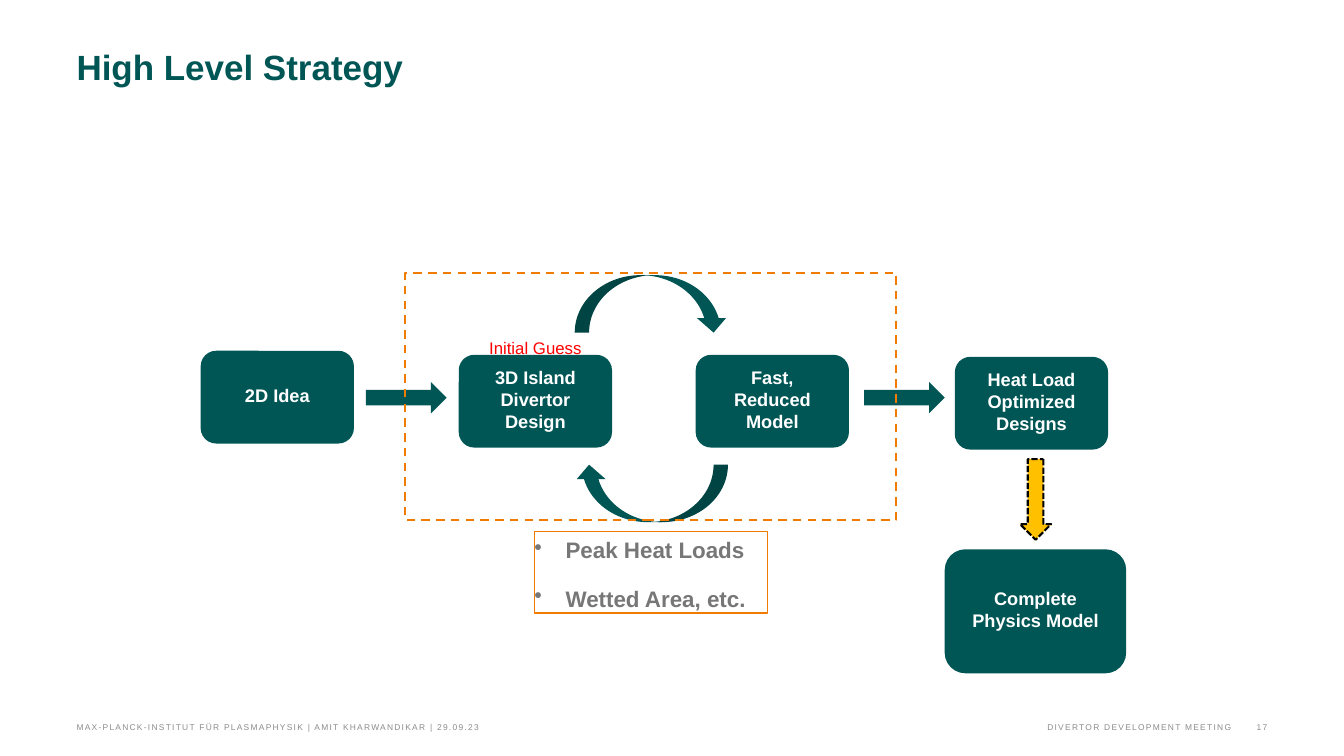
from dataclasses import dataclass

import pptx
import pptx.dml.color
import pptx.enum.dml
import pptx.enum.shapes
import pptx.enum.text
import pptx.oxml
import pptx.oxml.ns
import pptx.util
from pptx.util import Inches, Pt

SHAPE = pptx.enum.shapes.MSO_SHAPE
ALIGN = pptx.enum.text.PP_ALIGN
ANCHOR = pptx.enum.text.MSO_ANCHOR
DASH = pptx.enum.dml.MSO_LINE

TEAL, ORANGE, GOLD = "005555", "EF7C00", "FFC000"
WHITE, BLACK, RED = "FFFFFF", "000000", "FF0000"
GREY, FOOTER_GREY = "777777", "8C8C8C"


@dataclass(frozen=True)
class Area:
    left: float
    top: float
    width: float
    height: float

    def lengths(self) -> list:
        return [Inches(n) for n in (self.left, self.top, self.width, self.height)]


@dataclass(frozen=True)
class Style:
    size: float
    color: str
    bold: bool = False
    align: ALIGN = ALIGN.LEFT
    line_points: float | None = None


@dataclass(frozen=True)
class Step:
    text: str
    area: Area


@dataclass(frozen=True)
class Arrow:
    kind: SHAPE
    area: Area
    rotation: float = 0


@dataclass(frozen=True)
class FooterPart:
    text: str
    area: Area
    align: ALIGN


STEPS = [
    Step("2D Idea", Area(1.99, 3.48, 1.52, 0.92)),
    Step("3D Island Divertor Design", Area(4.55, 3.52, 1.52, 0.92)),
    Step("Fast, Reduced Model", Area(6.9, 3.52, 1.52, 0.92)),
    Step("Heat Load Optimized Designs", Area(9.47, 3.54, 1.52, 0.92)),
    Step("Complete Physics Model", Area(9.37, 5.45, 1.8, 1.23)),
]
ARROWS = [
    Arrow(SHAPE.CURVED_DOWN_ARROW, Area(5.7, 2.73, 1.52, 0.57)),
    Arrow(SHAPE.CURVED_DOWN_ARROW, Area(5.7, 4.61, 1.52, 0.57), 180),
    Arrow(SHAPE.RIGHT_ARROW, Area(3.63, 3.79, 0.8, 0.31)),
    Arrow(SHAPE.RIGHT_ARROW, Area(8.57, 3.79, 0.8, 0.31)),
]
FINAL_ARROW = Arrow(SHAPE.RIGHT_ARROW, Area(9.87, 4.8, 0.8, 0.31), 90)
FOOTER = [
    FooterPart("DIVERTOR DEVELOPMENT MEETING", Area(4.51, 7.1, 7.7, 0.16), ALIGN.RIGHT),
    FooterPart("MAX-PLANCK-INSTITUT FÜR PLASMAPHYSIK | AMIT KHARWANDIKAR | 29.09.23",
               Area(0.76, 7.1, 6.66, 0.16), ALIGN.LEFT),
    FooterPart("17", Area(12.21, 7.1, 0.36, 0.16), ALIGN.RIGHT),
]


def rgb(color: str) -> pptx.dml.color.RGBColor:
    return pptx.dml.color.RGBColor.from_string(color)


def add_bullet(para, indent: float) -> None:
    properties = para._p.get_or_add_pPr()
    properties.set("marL", str(Inches(indent)))
    properties.set("indent", str(-Inches(indent)))
    bullet = pptx.oxml.parse_xml(f'<a:buChar {pptx.oxml.ns.nsdecls("a")} char="•"/>')
    properties.append(bullet)


def write(box, lines: list[str], style: Style, anchor=ANCHOR.TOP, wrap: bool = True,
          margins: tuple = (0, 0, 0, 0), bullet_indent: float = 0) -> None:
    """Fill a box with one paragraph per line; margins are left, top, right, bottom."""
    frame = box.text_frame
    frame.word_wrap = wrap
    frame.vertical_anchor = anchor
    (frame.margin_left, frame.margin_top,
     frame.margin_right, frame.margin_bottom) = [Inches(n) for n in margins]
    for index, line in enumerate(lines):
        para = frame.add_paragraph() if index else frame.paragraphs[0]
        para.text = line
        para.alignment = style.align
        if style.line_points:
            para.line_spacing = Pt(style.line_points)
        if index:
            para.space_before = Pt(11.5)
        if bullet_indent:
            add_bullet(para, bullet_indent)
        para.font.name = "Arial"
        para.font.size = Pt(style.size)
        para.font.bold = style.bold
        para.font.color.rgb = rgb(style.color)


def add_text(page, area: Area, text: str, style: Style, **layout):
    box = page.shapes.add_textbox(*area.lengths())
    write(box, [text], style, **layout)
    return box


def add_figure(page, kind: SHAPE, area: Area, fill: str | None = None,
               line: str | None = None, line_width: float = 1.5, dash=None):
    figure = page.shapes.add_shape(kind, *area.lengths())
    figure.shadow.inherit = False
    if fill:
        figure.fill.solid()
        figure.fill.fore_color.rgb = rgb(fill)
    else:
        figure.fill.background()
    if line:
        figure.line.color.rgb = rgb(line)
        figure.line.width = Pt(line_width)
        if dash:
            figure.line.dash_style = dash
    else:
        figure.line.fill.background()
    return figure


def add_arrow(page, arrow: Arrow, fill: str, **outline) -> None:
    figure = add_figure(page, arrow.kind, arrow.area, fill, **outline)
    figure.rotation = arrow.rotation


def add_step(page, step: Step) -> None:
    box = add_figure(page, SHAPE.ROUNDED_RECTANGLE, step.area, TEAL)
    write(box, [step.text], Style(13, WHITE, True, ALIGN.CENTER),
          anchor=ANCHOR.MIDDLE, margins=(0.16, 0.12, 0.16, 0.16))


def add_footer(page, part: FooterPart) -> None:
    box = add_text(page, part.area, part.text, Style(6, FOOTER_GREY, align=part.align),
                   anchor=ANCHOR.BOTTOM, wrap=False)
    for span in box.text_frame.paragraphs[0].runs:
        span._r.get_or_add_rPr().set("spc", "90")


def main() -> None:
    deck = pptx.Presentation()
    deck.slide_width, deck.slide_height = Inches(13.33), Inches(7.5)
    page = deck.slides.add_slide(deck.slide_layouts[6])

    add_text(page, Area(0.76, 0.48, 10.47, 0.98), "High Level Strategy",
             Style(25, TEAL, True, line_points=28))
    for part in FOOTER:
        add_footer(page, part)
    for arrow in ARROWS:
        add_arrow(page, arrow, TEAL)
    add_arrow(page, FINAL_ARROW, GOLD, line=BLACK, dash=DASH.SQUARE_DOT)
    for step in STEPS:
        add_step(page, step)

    add_text(page, Area(4.54, 3.23, 1.54, 0.28), "Initial Guess",
             Style(12, RED, align=ALIGN.CENTER, line_points=23))
    add_figure(page, SHAPE.RECTANGLE, Area(4.02, 2.71, 4.87, 2.45),
               line=ORANGE, dash=DASH.DASH)
    metrics = add_figure(page, SHAPE.RECTANGLE, Area(5.3, 5.27, 2.31, 0.81),
                         WHITE, ORANGE, line_width=1)
    write(metrics, ["Peak Heat Loads", "Wetted Area, etc."],
          Style(16, GREY, True, line_points=23), bullet_indent=0.31)

    deck.save("out.pptx")


if __name__ == "__main__":
    main()
